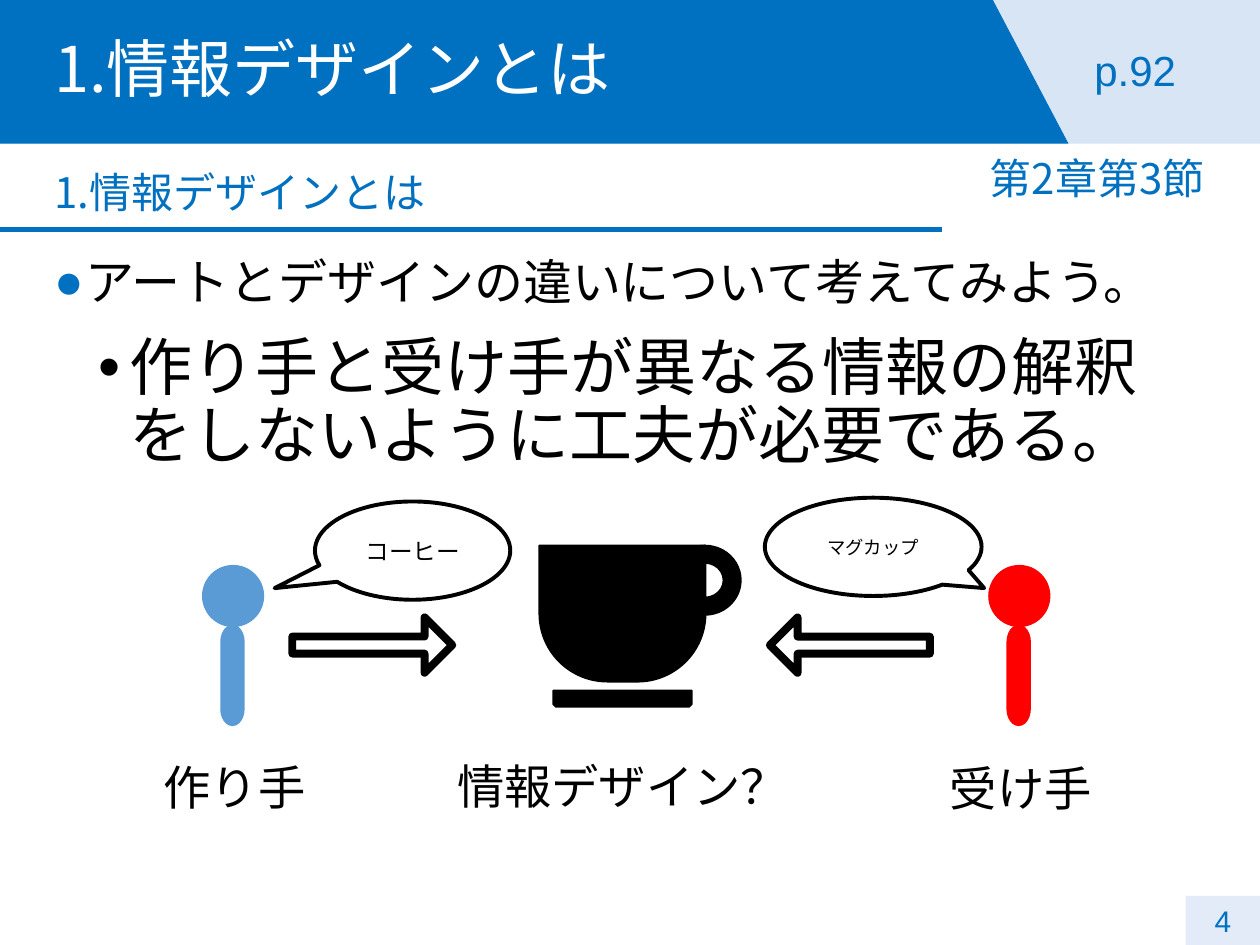
from pptx import Presentation
from pptx.dml.color import RGBColor
from pptx.enum.shapes import MSO_CONNECTOR, MSO_SHAPE
from pptx.enum.text import MSO_ANCHOR, MSO_AUTO_SIZE, PP_ALIGN
from pptx.oxml.ns import qn
from pptx.util import Inches, Pt
from lxml import etree

BLUE = RGBColor(0x00, 0x70, 0xC0)
PALE = RGBColor(0xD7, 0xE5, 0xF5)
CORNER = RGBColor(0xC6, 0xD9, 0xF1)
MAKER = RGBColor(0x5B, 0x9B, 0xD5)
RECEIVER = RGBColor(0xFF, 0x00, 0x00)
BLACK = RGBColor(0x00, 0x00, 0x00)
WHITE = RGBColor(0xFF, 0xFF, 0xFF)
JAPANESE = "Noto Sans CJK JP"
LATIN = "Arial"
LEFT, CENTER, RIGHT, JUSTIFY = PP_ALIGN.LEFT, PP_ALIGN.CENTER, PP_ALIGN.RIGHT, PP_ALIGN.JUSTIFY
TOP, MIDDLE = MSO_ANCHOR.TOP, MSO_ANCHOR.MIDDLE
ELLIPSE, RECTANGLE = MSO_SHAPE.OVAL, MSO_SHAPE.RECTANGLE
HEADING = "1.情報デザインとは"


def place(shape, box):
    """Move a shape to a box of left, top, width and height in inches."""
    shape.left, shape.top, shape.width, shape.height = map(Inches, box)


def write(shape, text, size, color=BLACK, face=JAPANESE, align=LEFT, anchor=TOP,
          insets=(0, 0.05, 0, 0.05), spacing=None, before=0, hang=0, bullet=None,
          bullet_color=BLACK, wrap=True):
    """Fill a shape with one formatted paragraph."""
    frame = shape.text_frame
    frame.text = text
    frame.word_wrap = wrap
    frame.auto_size = MSO_AUTO_SIZE.NONE
    frame.vertical_anchor = anchor
    frame.margin_left, frame.margin_top, frame.margin_right, frame.margin_bottom = map(Inches, insets)
    para = frame.paragraphs[0]
    para.alignment = align
    para.line_spacing = spacing
    para.space_before = Pt(before)
    properties = para._p.get_or_add_pPr()
    properties.set("marL", str(Inches(hang)))
    properties.set("indent", str(-Inches(hang)))
    if bullet:
        tint = etree.SubElement(properties, qn("a:buClr"))
        etree.SubElement(tint, qn("a:srgbClr"), val=str(bullet_color))
        etree.SubElement(properties, qn("a:buFont"), typeface=LATIN)
        etree.SubElement(properties, qn("a:buChar"), char=bullet)
    font = para.font
    font.size, font.name, font.bold = Pt(size), face, False
    font.color.rgb = color
    etree.SubElement(font._element, qn("a:ea"), typeface=face)


def add_text(page, box, text, size, **style):
    """Add a text box."""
    write(page.shapes.add_textbox(*map(Inches, box)), text, size, **style)


def add_figure(shapes, kind, box, fill=None, line=None, weight=1, turn=0, adjust=()):
    """Add a preset shape with its fill, outline, rotation and adjustments."""
    figure = shapes.add_shape(kind, *map(Inches, box))
    figure.shadow.inherit = False
    figure.rotation = turn
    for index, value in enumerate(adjust):
        figure.adjustments[index] = value
    if fill is None:
        figure.fill.background()
    else:
        figure.fill.solid()
        figure.fill.fore_color.rgb = fill
    if line is None:
        figure.line.fill.background()
    else:
        figure.line.color.rgb = line
        figure.line.width = Pt(weight)
    return figure


def add_header(page, box):
    """Draw the title band with its slanted edge, title and page reference."""
    left, top, width, height = box
    add_figure(page.shapes, RECTANGLE, box, PALE)
    builder = page.shapes.build_freeform(Inches(left), Inches(top))
    corners = [(7.88, 0), (8.48, height), (0, height)]
    builder.add_line_segments([(Inches(left + x), Inches(top + y)) for x, y in corners])
    band = builder.convert_to_shape()
    band.shadow.inherit = False
    band.fill.solid()
    band.fill.fore_color.rgb = BLUE
    band.line.fill.background()
    title = page.shapes.title
    place(title, (left + 0.43, top, 8.03, height))
    write(title, HEADING, 36, color=WHITE, anchor=MIDDLE, insets=(0, 0, 0, 0), spacing=0.9, hang=0.44)
    add_text(page, (left + 8.46, top + 0.35, 1.1, 0.46), "p.92", 24, color=BLUE, face=LATIN,
             align=CENTER, spacing=0.9)


def add_section(page, box):
    """Write the section name and chapter above a rule."""
    left, top, width, height = box
    bottom = Inches(top + height)
    rule = page.shapes.add_connector(MSO_CONNECTOR.STRAIGHT, Inches(left), bottom, Inches(left + 7.48), bottom)
    rule.line.color.rgb = BLUE
    rule.line.width = Pt(3)
    etree.SubElement(rule._element.spPr, qn("a:effectLst"))
    style = {"color": BLUE, "spacing": 0.9, "before": 10}
    add_text(page, (left + 0.43, top + 0.11, 7.05, 0.46), HEADING, 24, **style)
    add_text(page, (left + 7.1, top, 2.46, 0.46), "第2章第3節", 24, align=RIGHT, **style)


def add_points(page, box):
    """Write the question and the answer in the body placeholders."""
    left, top, width, height = box
    question, answer = page.placeholders[1], page.placeholders[2]
    place(question, (left, top, width, 0.47))
    write(question, "アートとデザインの違いについて考えてみよう。", 28, align=JUSTIFY,
          insets=(0, 0, 0, 0.05), spacing=0.9, hang=0.25, bullet="●", bullet_color=BLUE)
    place(answer, (left + 0.28, top + 0.58, 8.62, height - 0.58))
    write(answer, "作り手と受け手が異なる情報の解釈をしないように工夫が必要である。", 36,
          insets=(0.07, 0.04, 0.07, 0.04), spacing=0.9, before=10, hang=0.25, bullet="•")


def add_person(page, box, color, name):
    """Draw a person as head and body with a name below."""
    left, top, width, height = box
    person = page.shapes.add_group_shape().shapes
    add_figure(person, ELLIPSE, (left, top, width, width), color, color)
    add_figure(person, MSO_SHAPE.FLOWCHART_TERMINATOR,
               (left + width / 2 - 0.4, top + 0.78, 0.79, 0.18), color, color, turn=270)
    add_text(page, (left - 0.41, top + height, 1.34, 0.56), name, 27, insets=(0.1, 0.05, 0.1, 0.05), wrap=False)


def add_speech(page, box, tail, text, size):
    """Draw a speech balloon."""
    balloon = add_figure(page.shapes, MSO_SHAPE.OVAL_CALLOUT, box, line=BLACK, weight=2.25, adjust=tail)
    write(balloon, text, size, align=CENTER, anchor=MIDDLE, insets=(0.1, 0.05, 0.1, 0.05))


def add_cup(page, box):
    """Draw the cup with handle and saucer, and the label below."""
    left, top, width, height = box
    cup = page.shapes.add_group_shape().shapes
    add_figure(cup, MSO_SHAPE.ROUND_2_SAME_RECTANGLE, (left, top, 1.32, 1.08), BLACK, BLACK,
               turn=180, adjust=(0.5, 0))
    add_figure(cup, MSO_SHAPE.DONUT, (left + 1.03, top, 0.57, 0.55), BLACK, BLACK)
    add_figure(cup, MSO_SHAPE.SNIP_2_SAME_RECTANGLE, (left + 0.11, top + 1.15, 1.1, 0.13),
               BLACK, BLACK, turn=180)
    add_text(page, (left - 0.75, top + height, 2.85, 0.56), "情報デザイン？", 27,
             insets=(0.1, 0.05, 0.1, 0.05), wrap=False)


def add_diagram(page, box):
    """Draw maker and receiver looking at the same cup."""
    left, top, width, height = box
    add_person(page, (left + 0.41, top + 0.54, 0.48, 1.48), MAKER, "作り手")
    add_person(page, (left + 6.65, top + 0.54, 0.48, 1.49), RECEIVER, "受け手")
    for offset, turn in ((1.12, 0), (4.91, 180)):
        add_figure(page.shapes, MSO_SHAPE.RIGHT_ARROW, (left + offset, top + 0.95, 1.27, 0.44),
                   line=BLACK, weight=4.5, turn=turn, adjust=(0.306, 0.5))
    add_speech(page, (left + 1.3, top + 0.03, 1.55, 0.78), (-0.707, 0.382), "コーヒー", 13.5)
    add_speech(page, (left + 4.87, top, 1.72, 0.78), (0.512, 0.42), "マグカップ", 10.5)
    add_cup(page, (left + 3.08, top + 0.38, 1.6, 1.63))


def add_page_number(page, box):
    """Draw the page number on its translucent tile."""
    tile = add_figure(page.shapes, RECTANGLE, box, CORNER)
    tint = tile._element.spPr.find(qn("a:solidFill"))[0]
    etree.SubElement(tint, qn("a:alpha"), val="50000")
    write(tile, "4", 17, color=BLUE, face=LATIN, align=CENTER, anchor=MIDDLE)


def main():
    """Build the slide and save it."""
    deck = Presentation()
    deck.slide_width, deck.slide_height = Inches(10), Inches(7.5)
    page = deck.slides.add_slide(deck.slide_layouts[3])
    add_header(page, (0, 0, 10, 1.14))
    page.shapes._spTree.append(page.shapes.title._element)
    add_section(page, (0, 1.21, 10, 0.61))
    add_points(page, (0.43, 2.05, 9.14, 2.33))
    add_diagram(page, (1.2, 3.95, 7.58, 2.58))
    add_page_number(page, (9.41, 7.11, 0.59, 0.39))
    deck.save("out.pptx")


if __name__ == "__main__":
    main()
